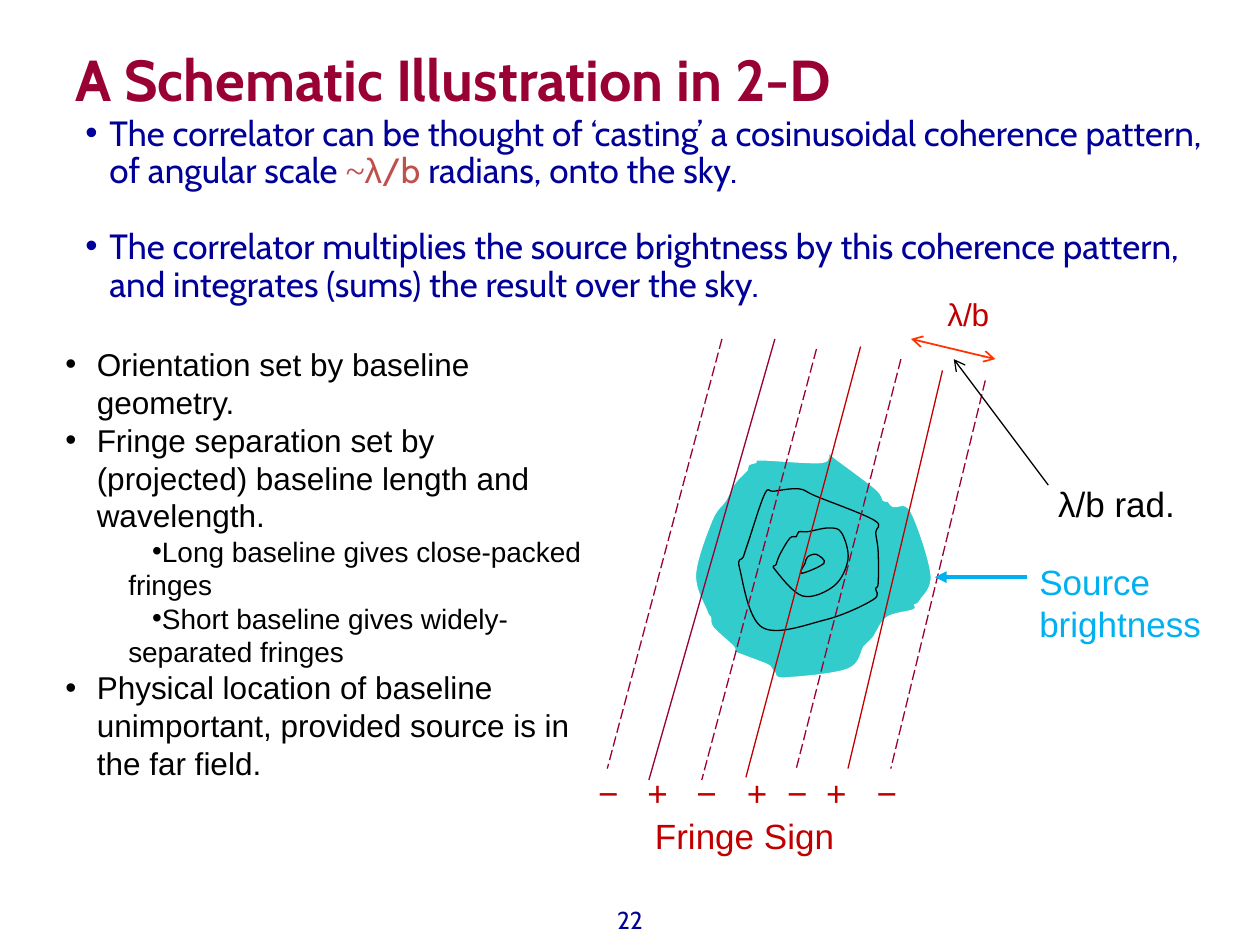
from collections import namedtuple

from lxml.etree import SubElement
from pptx import Presentation
from pptx.dml.color import RGBColor
from pptx.enum.dml import MSO_LINE
from pptx.enum.shapes import MSO_CONNECTOR
from pptx.enum.text import MSO_ANCHOR, PP_ALIGN
from pptx.oxml.ns import qn
from pptx.util import Pt

PX = 9144  # one px is a hundredth of an inch
Box = namedtuple("Box", "left top width height")

NAVY = RGBColor(0x00, 0x00, 0x99)
MAROON = RGBColor(0x99, 0x00, 0x33)
BRICK = RGBColor(0xC0, 0x50, 0x4D)
RED = RGBColor(0xC0, 0x00, 0x00)
ORANGE = RGBColor(0xFF, 0x33, 0x00)
TEAL = RGBColor(0x33, 0xCC, 0xCC)
SKY = RGBColor(0x00, 0xB0, 0xF0)
BLACK = RGBColor(0x00, 0x00, 0x00)
WHITE = RGBColor(0xFF, 0xFF, 0xFF)

# Fringes from left to right: sign, sign centre, colour, start and end
FRINGES = [
    ("−", 33, MAROON, (133, 41), (42, 382)),
    ("+", 72, MAROON, (175, 41), (75, 391)),
    ("−", 111, MAROON, (208, 49), (117, 391)),
    ("+", 151, RED, (243, 47), (152, 389)),
    ("−", 183, MAROON, (275, 57), (192, 382)),
    ("+", 214, RED, (308, 66), (233, 382)),
    ("−", 254, MAROON, (342, 74), (267, 382)),
]

# Brightness contours of the source, from the outside in
CONTOURS = [
    [(32, 27), (26, 39), (15, 55), (2, 98), (11, 127), (14, 132), (16, 140), (32, 155),
     (33, 159), (37, 161), (58, 169), (62, 172), (65, 176), (73, 180), (123, 173),
     (136, 155), (143, 148), (154, 132), (175, 126), (176, 122), (180, 119), (189, 98),
     (173, 48), (159, 44), (155, 40), (151, 39), (145, 30), (112, 5),
     (108, 1), (102, 9), (54, 7), (50, 9), (44, 11), (43, 15), (36, 22)],
    [(57, 34), (44, 72), (40, 84), (37, 93), (55, 140), (105, 134), (143, 118),
     (145, 109), (147, 105), (147, 80), (145, 65), (144, 55), (98, 36),
     (84, 30), (64, 32)],
    [(84, 64), (82, 68), (77, 69), (69, 82), (66, 90), (65, 94), (87, 115),
     (112, 107), (123, 86), (118, 65), (108, 61), (91, 64)],
    [(91, 84), (89, 89), (86, 97), (104, 89), (98, 82)],
]


def style(span, size, color, font="Arial", bold=False):
    span.font.size, span.font.name, span.font.bold = Pt(size), font, bold
    span.font.color.rgb = color


def add_text(page, box, lines, size, color, font="Arial", bold=False, wrap=True):
    frame = page.shapes.add_textbox(*(n * PX for n in box)).text_frame
    frame.word_wrap = wrap
    frame.text = "\n".join(lines)
    for para in frame.paragraphs:
        for span in para.runs:
            style(span, size, color, font, bold)
    return frame


def set_indent(para, margin, indent=0):
    properties = para._p.get_or_add_pPr()
    properties.set("marL", str(margin * PX))
    properties.set("indent", str(indent * PX))
    return properties


def add_bullet(para, margin, indent):
    properties = set_indent(para, margin, indent)
    SubElement(properties, qn("a:buFont"), typeface="Arial")
    SubElement(properties, qn("a:buChar"), char="•")


def add_line(page, box, start, end, color, width=0.75, dashed=False, head=None, tail=None):
    ends = [(box.left + x, box.top + y) for x, y in (start, end)]
    line = page.shapes.add_connector(
        MSO_CONNECTOR.STRAIGHT, *(n * PX for point in ends for n in point))
    line.line.color.rgb = color
    line.line.width = Pt(width)
    if dashed:
        line.line.dash_style = MSO_LINE.LONG_DASH
    for tag, kind in (("a:headEnd", head), ("a:tailEnd", tail)):
        if kind:
            SubElement(line.line._get_or_add_ln(), qn(tag), type=kind)
    SubElement(line._element.spPr, qn("a:effectLst"))


def round_segments(shape, points):
    """Turn the straight sides of a closed outline into smooth Bezier curves."""
    count = len(points)
    for i, side in enumerate(list(shape._element.iter(qn("a:lnTo")))):
        before, start, end, after = (points[(i + k) % count] for k in (-1, 0, 1, 2))
        first = [s + (e - b) / 6 for b, s, e in zip(before, start, end)]
        second = [e - (a - s) / 6 for s, e, a in zip(start, end, after)]
        side.tag = qn("a:cubicBezTo")
        end_point = side[0]
        for x, y in (first, second):
            control = SubElement(side, qn("a:pt"))
            control.set("x", str(round(x - shape.left)))
            control.set("y", str(round(y - shape.top)))
        side.append(end_point)


def add_source(page, box):
    for contour, edge in zip(CONTOURS, (WHITE, BLACK, BLACK, BLACK)):
        points = [((box.left + x) * PX, (box.top + y) * PX) for x, y in contour]
        builder = page.shapes.build_freeform(*points[0])
        builder.add_line_segments(points[1:] + points[:1], close=True)
        shape = builder.convert_to_shape()
        round_segments(shape, points)
        shape.shadow.inherit = False
        shape.fill.solid()
        shape.fill.fore_color.rgb = TEAL
        shape.line.color.rgb = edge
        shape.line.width = Pt(0.75)


def add_fringe_signs(page, box):
    signs = "".join("\t" + fringe[0] for fringe in FRINGES)
    sign_para, caption = add_text(page, box, [signs, "Fringe Sign"], 20, RED).paragraphs
    tabs = SubElement(sign_para._p.get_or_add_pPr(), qn("a:tabLst"))
    for fringe in FRINGES:
        SubElement(tabs, qn("a:tab"), pos=str(fringe[1] * PX), algn="ctr")
    set_indent(caption, 70)
    caption.space_before = Pt(1)


def add_diagram(page, box):
    def within(left, top, width, height):
        return Box(box.left + left, box.top + top, width, height)

    add_source(page, within(110, 130, 192, 181))
    for sign, _, color, start, end in FRINGES:
        add_line(page, box, start, end, color, dashed=sign == "−")
    add_fringe_signs(page, within(0, 379, 500, 79))
    # Fringe spacing and its labels
    add_line(page, box, (283, 41), (350, 57), ORANGE, 1, head="arrow", tail="arrow")
    add_line(page, box, (317, 57), (392, 157), BLACK, head="arrow")
    add_text(page, within(302, 1, 73, 40), ["λ/b"], 18, RED)
    add_text(page, within(390, 150, 114, 43), ["λ/b rad."], 20, BLACK, wrap=False)
    # Source label
    add_text(page, within(375, 212, 154, 77), ["Source", "brightness"], 20, SKY)
    add_line(page, box, (375, 230), (302, 230), SKY, 2.25, tail="triangle")


def add_summary(page, box):
    frame = add_text(page, box, [
        "The correlator can be thought of ‘casting’ a cosinusoidal coherence pattern, "
        "of angular scale ",
        "The correlator multiplies the source brightness by this coherence pattern, "
        "and integrates (sums) the result over the sky."], 20, NAVY, "Cabin")
    for para in frame.paragraphs:
        para.line_spacing = 0.9
        add_bullet(para, 19, -19)
    first, second = frame.paragraphs
    second.space_before = Pt(21.5)
    for text, color, font in (("~", BRICK, "Times New Roman"), ("λ", BRICK, "Arial"),
                              ("/b ", BRICK, "Cabin"),
                              ("radians, onto the sky.", NAVY, "Cabin")):
        span = first.add_run()
        span.text = text
        style(span, 20, color, font)


def add_fringe_facts(page, box):
    items = [
        (0, "Orientation set by baseline geometry."),
        (0, "Fringe separation set by (projected) baseline length and wavelength."),
        (1, "Long baseline gives close-packed fringes"),
        (1, "Short baseline gives widely-separated fringes"),
        (0, "Physical location of baseline unimportant, provided source is in the far field."),
    ]
    frame = add_text(page, box, [text for _, text in items], 18, BLACK)
    for (level, _), para in zip(items, frame.paragraphs):
        para.level = level
        add_bullet(para, *((50, 19) if level else (25, -25)))
        para.runs[0].font.size = Pt(16 if level else 18)


def add_page_number(page, box):
    frame = add_text(page, box, ["22"], 14, NAVY, "Cabin")
    frame.vertical_anchor = MSO_ANCHOR.MIDDLE
    frame.paragraphs[0].alignment = PP_ALIGN.CENTER


def main():
    deck = Presentation()
    deck.slide_width, deck.slide_height = 1000 * PX, 750 * PX
    page = deck.slides.add_slide(deck.slide_layouts[6])
    add_page_number(page, Box(50, 710, 900, 40))
    add_text(page, Box(50, 30, 900, 125), ["A Schematic Illustration in 2-D"],
             33, MAROON, "Cabin", bold=True)
    add_summary(page, Box(58, 87, 917, 167))
    add_fringe_facts(page, Box(42, 269, 433, 370))
    add_diagram(page, Box(440, 228, 523, 458))
    deck.save("out.pptx")


if __name__ == "__main__":
    main()
